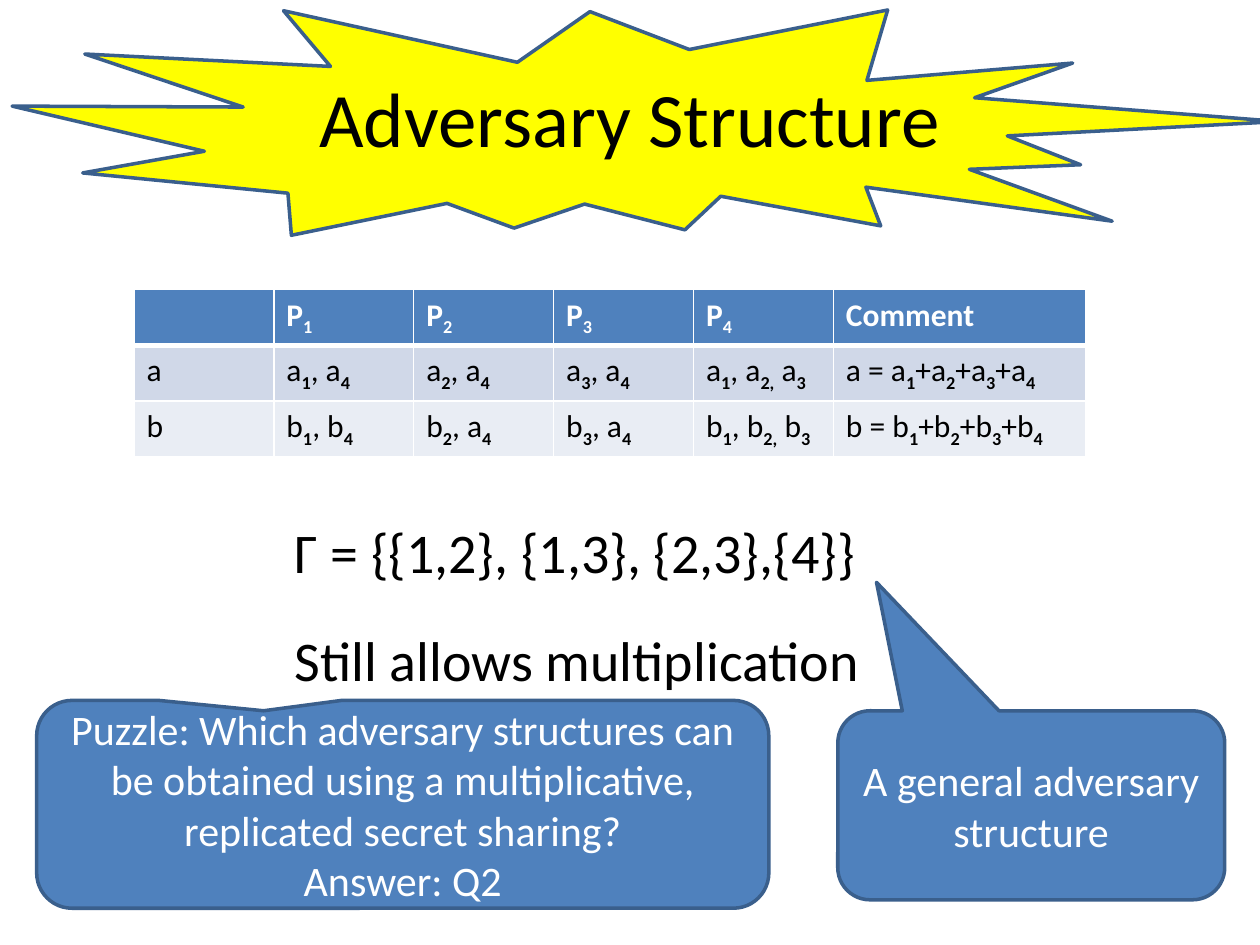
import pptx
import pptx.util
import pptx.dml.color
import pptx.enum.shapes
import pptx.enum.text
import pptx.oxml
import pptx.oxml.ns

Cm = pptx.util.Cm
Pt = pptx.util.Pt
SHAPES = pptx.enum.shapes.MSO_SHAPE
ALIGN = pptx.enum.text.PP_ALIGN
ANCHOR = pptx.enum.text.MSO_ANCHOR
FONT = "Calibri"
COLOURS = {"ink": "000000", "white": "FFFFFF", "yellow": "FFFF00", "blue": "4F81BD",
           "outline": "3A5F8C", "band_dark": "D0D8E8", "band_light": "E9EDF4"}

# Underscores enclose subscripts
SHARES = [
    ["", "P_1_", "P_2_", "P_3_", "P_4_", "Comment"],
    ["a", "a_1_, a_4_", "a_2_, a_4_", "a_3_, a_4_", "a_1_, a_2,_ a_3_",
     "a = a_1_+a_2_+a_3_+a_4_"],
    ["b", "b_1_, b_4_", "b_2_, a_4_", "b_3_, a_4_", "b_1_, b_2,_ b_3_",
     "b = b_1_+b_2_+b_3_+b_4_"],
]


def rgb(name):
    return pptx.dml.color.RGBColor.from_string(COLOURS[name])


def write(frame, text, size=18, colour="ink", bold=False, align=ALIGN.LEFT,
          anchor=ANCHOR.TOP, wrap=True):
    """Fill a text frame; newlines break the line, underscores enclose subscripts."""
    frame.word_wrap = wrap
    frame.vertical_anchor = anchor
    para = frame.paragraphs[0]
    para.alignment = align
    for number, line in enumerate(text.split("\n")):
        if number:
            para.add_line_break()
        for index, part in enumerate(line.split("_")):
            if not part:
                continue
            subscript = index % 2 == 1
            span = para.add_run()
            span.text = part
            span.font.name = FONT
            span.font.size = Pt(size)
            span.font.bold = bold or subscript
            span.font.color.rgb = rgb(colour)
            if subscript:
                span.font._element.set("baseline", "-25000")


def add_outlined(page, kind, left, top, width, height, fill):
    shape = page.shapes.add_shape(kind, Cm(left), Cm(top), Cm(width), Cm(height))
    shape.shadow.inherit = False
    shape.fill.solid()
    shape.fill.fore_color.rgb = rgb(fill)
    shape.line.color.rgb = rgb("outline")
    shape.line.width = Pt(2)
    return shape


def add_title(page, text, left, top, width, height):
    burst = add_outlined(page, SHAPES.EXPLOSION2, left, top, width, height, "yellow")
    burst.rotation = 4.2
    box = page.shapes.add_textbox(Cm(left + 1.02), Cm(top + 0.91), Cm(22.86), Cm(3.18))
    write(box.text_frame, text, size=44, align=ALIGN.CENTER, anchor=ANCHOR.MIDDLE)


def set_borders(cell, top, bottom):
    properties = cell._tc.get_or_add_tcPr()
    for index, (side, points) in enumerate(zip("LRTB", (1, 1, top, bottom))):
        properties.insert(index, pptx.oxml.parse_xml(
            f'<a:ln{side} {pptx.oxml.ns.nsdecls("a")} w="{Pt(points)}"><a:solidFill>'
            f'<a:srgbClr val="{COLOURS["white"]}"/></a:solidFill></a:ln{side}>'))


def add_share_table(page, rows, left, top, column, last_column, row_height):
    count = len(rows[0])
    widths = [column] * (count - 1) + [last_column]
    table = page.shapes.add_table(len(rows), count, Cm(left), Cm(top), Cm(sum(widths)),
                                  Cm(row_height * len(rows))).table
    for index, width in enumerate(widths):
        table.columns[index].width = Cm(width)
    fills = ["blue", "band_dark", "band_light"]
    for r, row in enumerate(rows):
        header = r == 0
        for c, text in enumerate(row):
            cell = table.cell(r, c)
            cell.fill.solid()
            cell.fill.fore_color.rgb = rgb(fills[r])
            set_borders(cell, top=3 if r == 1 else 1, bottom=3 if header else 1)
            write(cell.text_frame, text, colour="white" if header else "ink", bold=header)


def add_statements(page, lines, left, top, width, step):
    for index, line in enumerate(lines):
        box = page.shapes.add_textbox(Cm(left), Cm(top + index * step), Cm(width), Cm(1.62))
        write(box.text_frame, line, size=32, wrap=False)
        box.text_frame.auto_size = pptx.enum.text.MSO_AUTO_SIZE.SHAPE_TO_FIT_TEXT


def add_callout(page, text, left, top, width, height, tip):
    callout = add_outlined(page, SHAPES.ROUNDED_RECTANGULAR_CALLOUT,
                           left, top, width, height, "blue")
    for index, value in enumerate((*tip, 0.17)):
        callout.adjustments[index] = value
    write(callout.text_frame, text, size=24, colour="white", align=ALIGN.CENTER,
          anchor=ANCHOR.MIDDLE)


def main():
    deck = pptx.Presentation()
    deck.slide_width, deck.slide_height = Cm(25.4), Cm(19.05)
    page = deck.slides.add_slide(deck.slide_layouts[6])

    # Title on a burst
    add_title(page, "Adversary Structure", 0.25, -0.15, 25.5, 5.41)
    # Shares held by each party
    add_share_table(page, SHARES, 2.7, 5.84, 2.82, 5.08, 1.03)
    # Adversary structure and its consequence
    add_statements(page, ["Γ = {{1,2}, {1,3}, {2,3},{4}}", "Still allows multiplication"],
                   5.69, 10.31, 12.1, 2.18)
    # Callouts
    add_callout(page, "A general adversary structure", 16.89, 14.33, 7.8, 3.81,
                tip=(-0.4, -1.18))
    add_callout(page, "Puzzle: Which adversary structures can be obtained using a "
                "multiplicative, replicated secret sharing?\nAnswer: Q2",
                0.74, 14.12, 14.76, 4.19, tip=(-0.19, -0.45))
    deck.save("out.pptx")


if __name__ == "__main__":
    main()
